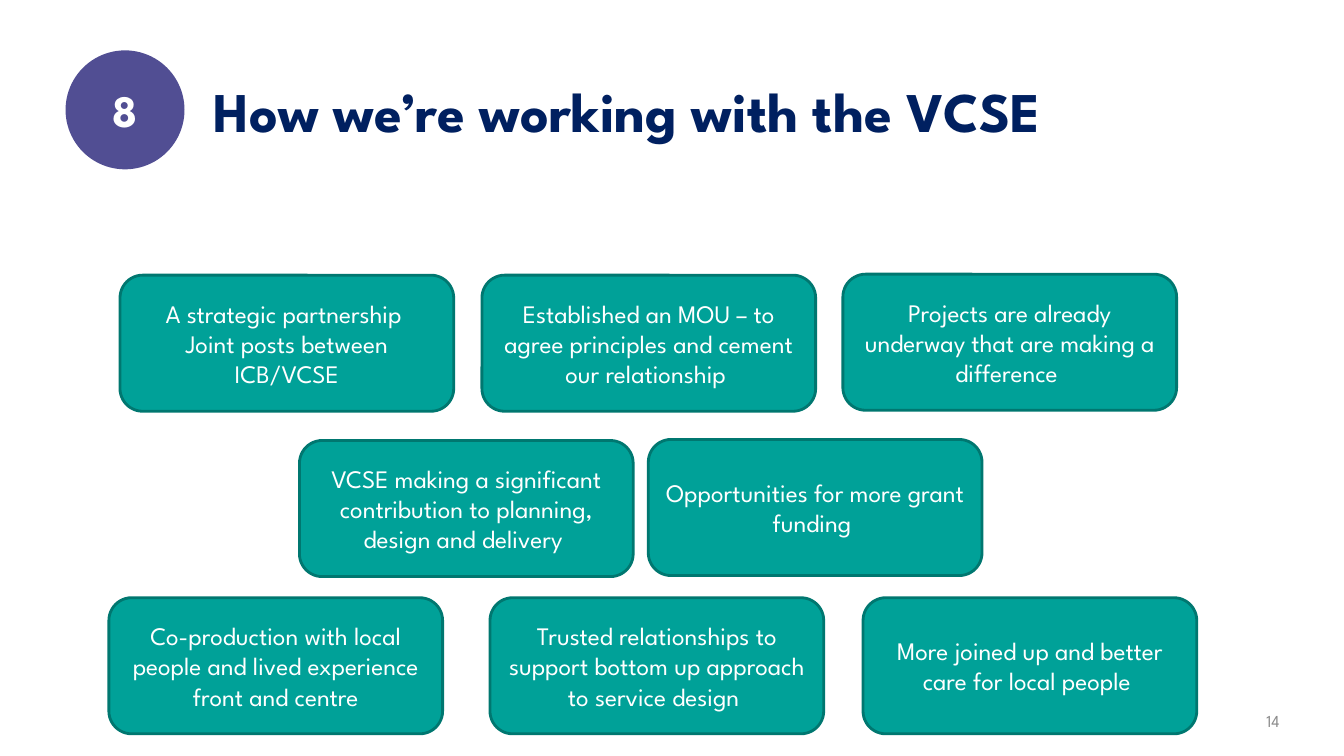
from pptx import Presentation
from pptx.dml.color import RGBColor
from pptx.enum.shapes import MSO_SHAPE
from pptx.enum.text import MSO_ANCHOR, PP_ALIGN
from pptx.util import Inches, Pt

OVAL = MSO_SHAPE.OVAL
ROUNDED = MSO_SHAPE.ROUNDED_RECTANGLE
MIDDLE = MSO_ANCHOR.MIDDLE
LEFT, CENTER, RIGHT = PP_ALIGN.LEFT, PP_ALIGN.CENTER, PP_ALIGN.RIGHT

FONT = "League Spartan"
WHITE = "FFFFFF"
NAVY = "002060"
PURPLE = "514E93"
TEAL = "00A198"
DARK_TEAL = "007770"
GREY = "8C8C8C"

CARD_WIDTH, CARD_HEIGHT = 3.31, 1.35
CARDS = [
    (1.19, 2.73, "A strategic partnership \nJoint posts between ICB/VCSE"),
    (4.78, 2.73, "Established an MOU – to agree principles and cement our relationship "),
    (8.36, 2.72, "Projects are already underway that are making a difference "),
    (2.97, 4.37, "VCSE making a significant contribution to planning, design and delivery "),
    (6.43, 4.36, "Opportunities for more grant funding "),
    (1.08, 5.93, "Co-production with local people and lived experience front and centre"),
    (4.86, 5.93, "Trusted relationships to support bottom up approach to service design "),
    (8.56, 5.93, "More joined up and better care for local people "),
]


def color(value):
    return RGBColor.from_string(value)


def write(shape, text, size, ink, align, bold=False):
    frame = shape.text_frame
    frame.word_wrap = True
    frame.vertical_anchor = MIDDLE
    frame.text = text
    for para in frame.paragraphs:
        para.alignment = align
        for span in para.runs:
            span.font.name = FONT
            span.font.size = Pt(size)
            span.font.bold = bold
            span.font.color.rgb = color(ink)


def add_shape(page, kind, left, top, width, height, fill):
    shape = page.shapes.add_shape(
        kind, Inches(left), Inches(top), Inches(width), Inches(height)
    )
    shape.shadow.inherit = False
    shape.fill.solid()
    shape.fill.fore_color.rgb = color(fill)
    shape.line.fill.background()
    return shape


def add_text(page, left, top, width, height, text, size, ink, align, bold=False):
    box = page.shapes.add_textbox(
        Inches(left), Inches(top), Inches(width), Inches(height)
    )
    write(box, text, size, ink, align, bold)
    return box


def add_card(page, left, top, text):
    card = add_shape(page, ROUNDED, left, top, CARD_WIDTH, CARD_HEIGHT, TEAL)
    card.line.color.rgb = color(DARK_TEAL)
    card.line.width = Pt(2)
    write(card, text, 18, WHITE, CENTER)


def main():
    deck = Presentation()
    deck.slide_width = Inches(13.33)
    deck.slide_height = Inches(7.5)
    page = deck.slides.add_slide(deck.slide_layouts[6])

    add_shape(page, OVAL, 0.65, 0.5, 1.18, 1.18, PURPLE)
    add_text(page, 2.02, 0.42, 10.24, 1.35, "How we’re working with the VCSE",
             40, NAVY, LEFT, True)
    add_text(page, 12.26, 6.95, 0.53, 0.4, "14", 12, GREY, RIGHT)
    number = add_text(page, 0.65, 0.78, 1.18, 0.62, "8", 32, WHITE, CENTER, True)
    number.text_frame.margin_top = number.text_frame.margin_bottom = Inches(0)

    for left, top, text in CARDS:
        add_card(page, left, top, text)

    deck.save("out.pptx")


if __name__ == "__main__":
    main()
